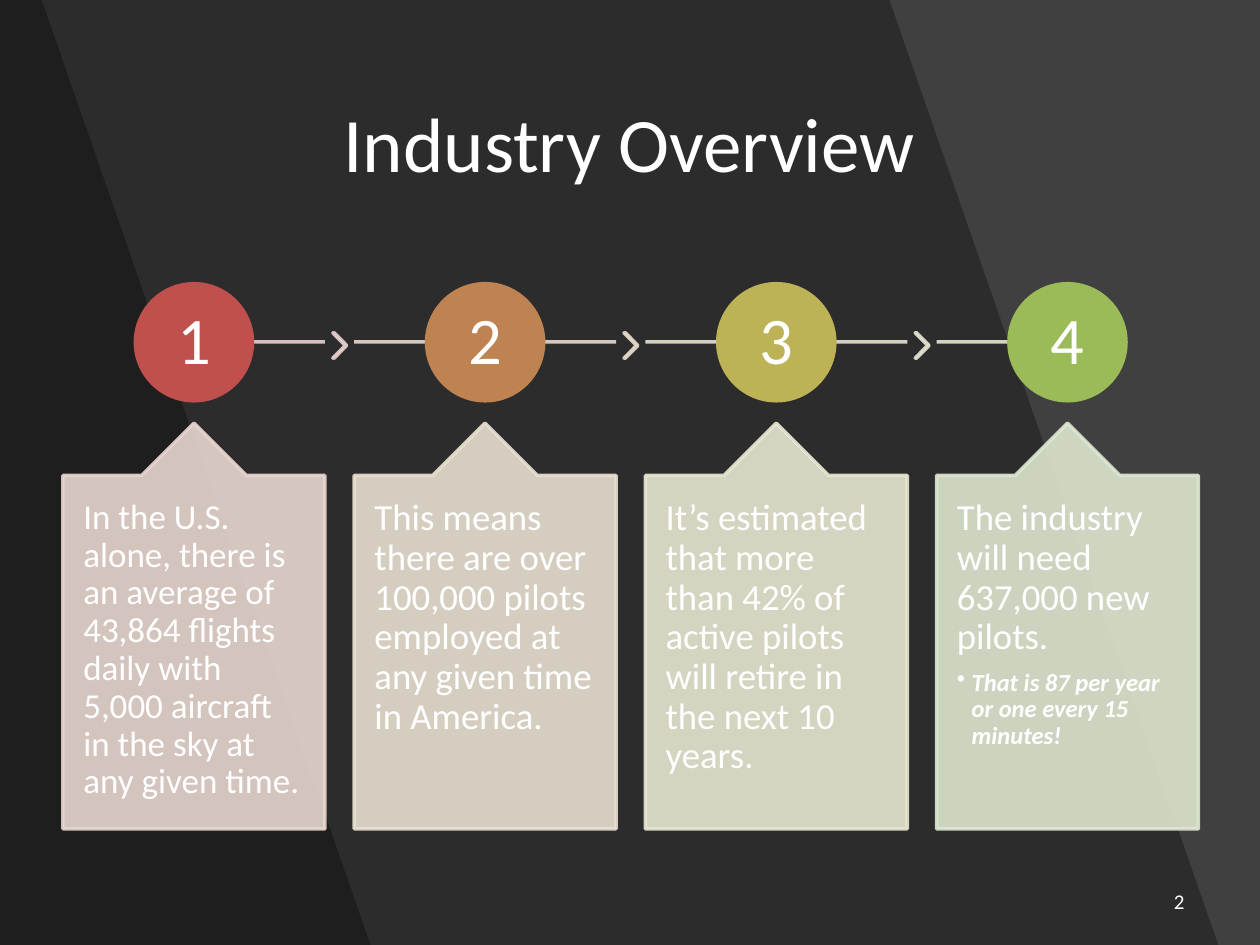
from dataclasses import dataclass

from lxml.etree import SubElement
from pptx import Presentation
from pptx.dml.color import RGBColor
from pptx.enum.shapes import MSO_CONNECTOR, MSO_SHAPE as Shape
from pptx.enum.text import MSO_ANCHOR as Anchor, PP_ALIGN as Align
from pptx.oxml.ns import qn
from pptx.util import Cm, Pt


@dataclass(frozen=True)
class Theme:
    font: str = "Calibri"
    background: str = "404040"
    shade: str = "000000"
    text: str = "FFFFFF"
    circles: tuple = ("C0504D", "BE8351", "BDB255", "9BBB59")
    cards: tuple = ("E8D7D0", "E8E0D1", "E7E7D1", "DEE7D1")
    lines: tuple = ("E8D0D0", "E8DAD0", "E8E2D1", "E4E7D1")
    chevrons: tuple = ("E8D3D0", "E8DDD0", "E7E5D1")
    title_size: int = 44
    number_size: int = 38
    detail_size: int = 14
    page_size: int = 12
    outline: int = 2
    tint_opacity: int = 90
    shade_opacity: int = 30


THEME = Theme()
WIDTH, HEIGHT = 25.4, 19.05
FIRST_LEFT, PITCH, CARD_WIDTH = 1.27, 5.87, 5.28
CARD_TOP, CARD_HEIGHT = 8.53, 8.18
TEXT_TOP, TEXT_HEIGHT = 9.6, 7.14
CIRCLE_TOP, CIRCLE_SIZE = 5.72, 2.36
LINE_Y = 6.89
# Start and end of each timeline line, measured from its column's left edge
LINE_SPANS = ((2.95, CARD_WIDTH), (0, CARD_WIDTH), (0, CARD_WIDTH), (0, CARD_WIDTH / 2))
STEPS = (
    ("In the U.S. alone, there is an average of 43,864 flights daily with "
     "5,000 aircraft in the sky at any given time.", 20, None),
    ("This means there are over 100,000 pilots employed at any given time "
     "in America.", 21, None),
    ("It’s estimated that more than 42% of active pilots will retire in "
     "the next 10 years.", 21, None),
    ("The industry will need 637,000 new pilots.", 21,
     "That is 87 per year or one every 15 minutes!"),
)


def set_solid(fill, color, opacity=100):
    fill.solid()
    fill.fore_color.rgb = RGBColor.from_string(color)
    if opacity < 100:
        for node in fill._xPr.iter(qn("a:srgbClr")):
            SubElement(node, qn("a:alpha"), val=str(opacity * 1000))


def set_line(line, color, opacity=100):
    line.width = Pt(THEME.outline)
    set_solid(line.fill, color, opacity)


def add_shade(slide, top_right, bottom_right):
    """Darken the background left of a slanted edge."""
    builder = slide.shapes.build_freeform(0, 0)
    corners = ((top_right, 0), (bottom_right, HEIGHT), (0, HEIGHT))
    builder.add_line_segments([(Cm(x), Cm(y)) for x, y in corners], close=True)
    shape = builder.convert_to_shape()
    shape.shadow.inherit = False
    set_solid(shape.fill, THEME.shade, THEME.shade_opacity)
    shape.line.fill.background()


def add_shape(slide, kind, left, top, width, height, color, opacity=100):
    shape = slide.shapes.add_shape(kind, Cm(left), Cm(top), Cm(width), Cm(height))
    shape.shadow.inherit = False
    set_solid(shape.fill, color, opacity)
    set_line(shape.line, color, opacity)
    return shape


def add_line(slide, start, end, color):
    line = slide.shapes.add_connector(
        MSO_CONNECTOR.STRAIGHT, Cm(start), Cm(LINE_Y), Cm(end), Cm(LINE_Y))
    set_line(line.line, color, THEME.tint_opacity)
    SubElement(line._element.spPr, qn("a:effectLst"))


def style_paragraph(paragraph, text, size, align=Align.LEFT):
    paragraph.text = text
    paragraph.alignment = align
    font = paragraph.font
    font.name, font.size = THEME.font, Pt(size)
    font.color.rgb = RGBColor.from_string(THEME.text)


def add_text(slide, left, top, width, height, text, size, align=Align.LEFT,
             anchor=Anchor.MIDDLE, insets=(0.25, 0.13)):
    box = slide.shapes.add_textbox(Cm(left), Cm(top), Cm(width), Cm(height))
    frame = box.text_frame
    frame.word_wrap = True
    frame.vertical_anchor = anchor
    frame.margin_left = frame.margin_right = Cm(insets[0])
    frame.margin_top = frame.margin_bottom = Cm(insets[1])
    style_paragraph(frame.paragraphs[0], text, size, align)
    return frame


def add_bullet(frame, text):
    paragraph = frame.add_paragraph()
    paragraph.level = 1
    paragraph.line_spacing = 0.9
    properties = paragraph._p.get_or_add_pPr()
    properties.set("marL", str(Cm(0.3)))
    properties.set("indent", str(Cm(-0.3)))
    SubElement(properties, qn("a:buChar"), char="•")
    style_paragraph(paragraph, text, THEME.detail_size)
    paragraph.font.bold = paragraph.font.italic = True


def add_number(slide, center, number):
    left = center - CIRCLE_SIZE / 2
    add_shape(slide, Shape.OVAL, left, CIRCLE_TOP, CIRCLE_SIZE, CIRCLE_SIZE,
              THEME.circles[number - 1])
    frame = add_text(slide, center - 0.84, 6.07, 1.68, 1.68, str(number),
                     THEME.number_size, Align.CENTER, insets=(0.1, 0.1))
    frame.paragraphs[0].line_spacing = 0.9


def add_card(slide, left, color, text, size, detail):
    card = add_shape(slide, Shape.UP_ARROW_CALLOUT, left, CARD_TOP, CARD_WIDTH,
                     CARD_HEIGHT, color, THEME.tint_opacity)
    for index, value in enumerate((0.5, 0.2, 0.2, 1)):
        card.adjustments[index] = value
    frame = add_text(slide, left, TEXT_TOP, CARD_WIDTH, TEXT_HEIGHT, text, size,
                     anchor=Anchor.TOP, insets=(0.41, 0.46))
    paragraph = frame.paragraphs[0]
    paragraph.line_spacing = 0.9
    paragraph.space_after = Pt(7)
    if detail:
        add_bullet(frame, detail)


def add_step(slide, index):
    """Draw one column: its timeline piece, number and card."""
    left = FIRST_LEFT + index * PITCH
    start, end = LINE_SPANS[index]
    add_line(slide, left + start, left + end, THEME.lines[index])
    if index < len(THEME.chevrons):
        chevron = add_shape(slide, Shape.CHEVRON, left + 5.44, 6.71, 0.28, 0.51,
                            THEME.chevrons[index], THEME.tint_opacity)
        chevron.adjustments[0] = 0.9
    add_number(slide, left + CARD_WIDTH / 2, index + 1)
    add_card(slide, left, THEME.cards[index], *STEPS[index])


def main():
    presentation = Presentation()
    presentation.slide_width, presentation.slide_height = Cm(WIDTH), Cm(HEIGHT)
    slide = presentation.slides.add_slide(presentation.slide_layouts[6])
    set_solid(slide.background.fill, THEME.background)
    add_shade(slide, 17.93, 24.56)
    add_shade(slide, 0.84, 7.47)
    add_text(slide, 1.73, 1.02, 21.92, 3.68, "Industry Overview",
             THEME.title_size, Align.CENTER)
    for index in range(len(STEPS)):
        add_step(slide, index)
    add_text(slide, 18.21, 17.65, 5.92, 1.02, "2", THEME.page_size, Align.RIGHT)
    presentation.save("out.pptx")


if __name__ == "__main__":
    main()
